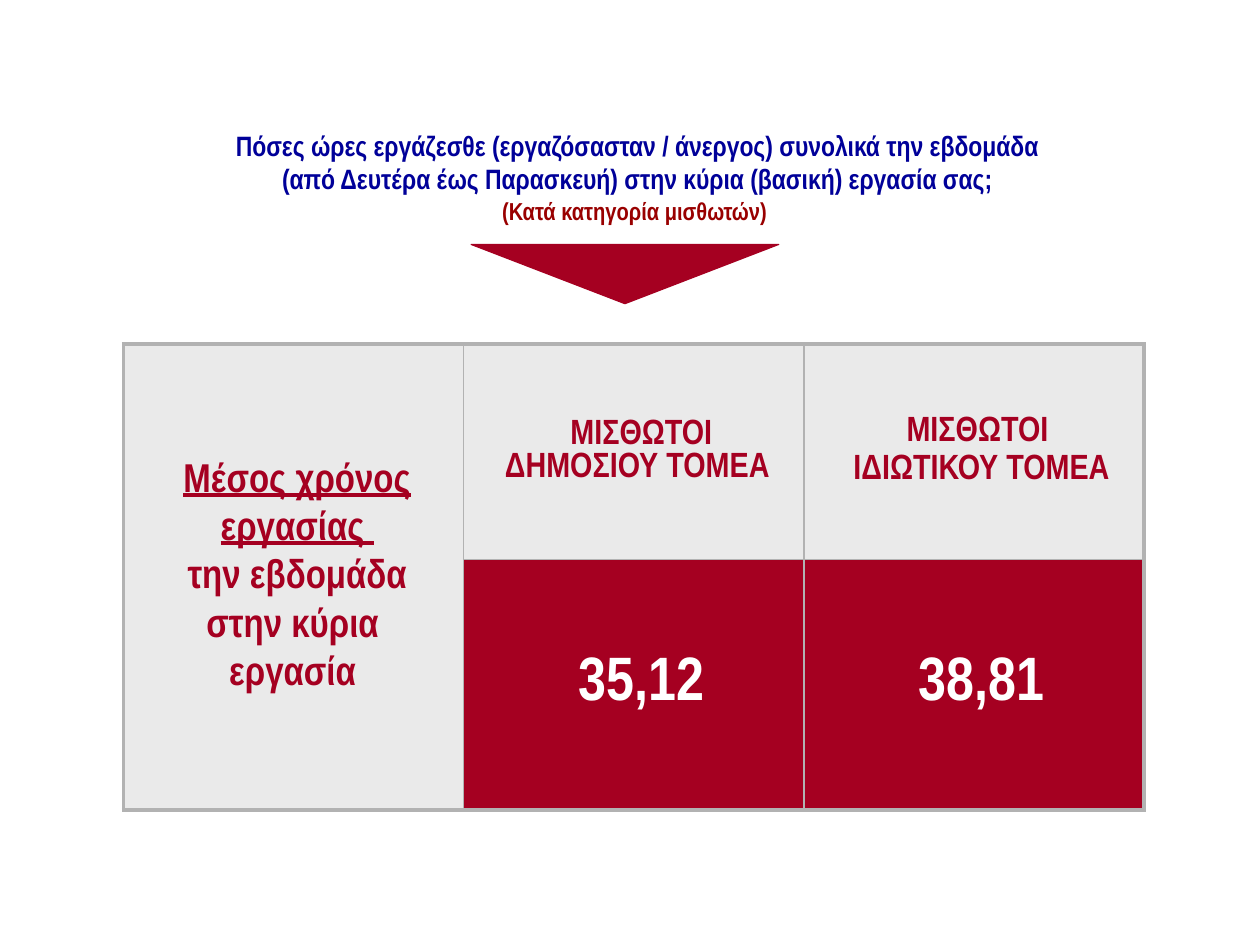
from dataclasses import dataclass

from lxml.etree import SubElement
from pptx import Presentation
from pptx.dml.color import RGBColor
from pptx.enum.shapes import MSO_SHAPE
from pptx.enum.text import MSO_ANCHOR, MSO_AUTO_SIZE, PP_ALIGN
from pptx.oxml import parse_xml
from pptx.oxml.ns import nsdecls, qn
from pptx.util import Inches, Pt

FONT = "Arial Narrow"
COLORS = {
    "question": "000099",
    "note": "990000",
    "crimson": "A50021",
    "panel": "EAEAEA",
    "border": "B2B2B2",
    "white": "FFFFFF",
}
THICK, THIN = 2.25, 1


@dataclass(frozen=True)
class Line:
    text: str
    size: float
    color: str
    underline: bool = False


@dataclass(frozen=True)
class Entry:
    row: int
    column: int
    lines: tuple[Line, ...]
    fill: str


def rgb(name: str) -> RGBColor:
    return RGBColor.from_string(COLORS[name])


def write_lines(frame, lines: tuple[Line, ...]) -> None:
    frame.text = "\n".join(line.text for line in lines)
    for paragraph, line in zip(frame.paragraphs, lines):
        paragraph.alignment = PP_ALIGN.CENTER
        for run in paragraph.runs:
            font = run.font
            font.name, font.size, font.bold = FONT, Pt(line.size), True
            font.underline = line.underline
            font.color.rgb = rgb(line.color)


def add_text(slide, left: float, top: float, width: float, height: float,
             lines: tuple[Line, ...]) -> None:
    frame = slide.shapes.add_textbox(
        Inches(left), Inches(top), Inches(width), Inches(height)).text_frame
    frame.word_wrap = True
    frame.auto_size = MSO_AUTO_SIZE.SHAPE_TO_FIT_TEXT
    write_lines(frame, lines)


def set_borders(cell, widths: dict[str, float]) -> None:
    """Put the borders, keyed L, R, T, B in that order, ahead of the cell's fill."""
    properties = cell._tc.get_or_add_tcPr()
    for index, (side, width) in enumerate(widths.items()):
        border = parse_xml(f'<a:ln{side} {nsdecls("a")} w="{Pt(width)}"/>')
        fill = SubElement(border, qn("a:solidFill"))
        SubElement(fill, qn("a:srgbClr"), val=COLORS["border"])
        properties.insert(index, border)


def fill_entry(table, entry: Entry) -> None:
    cell = table.cell(entry.row, entry.column)
    cell.vertical_anchor = MSO_ANCHOR.MIDDLE
    write_lines(cell.text_frame, entry.lines)
    for paragraph in cell.text_frame.paragraphs:
        paragraph.space_before = Pt(3)
        properties = paragraph._p.get_or_add_pPr()
        properties.set("marL", str(Inches(0.12)))
        properties.set("indent", "0")
    cell.fill.solid()
    cell.fill.fore_color.rgb = rgb(entry.fill)


def add_hours_table(slide, entries: tuple[Entry, ...]) -> None:
    row_heights = (1.71, 1.99)
    column_count, column_width = 3, 2.7
    table = slide.shapes.add_table(
        len(row_heights), column_count, Inches(0.98), Inches(2.73),
        Inches(column_count * column_width), Inches(sum(row_heights))).table
    for column in table.columns:
        column.width = Inches(column_width)
    for row, height in zip(table.rows, row_heights):
        row.height = Inches(height)

    label = table.cell(0, 0)
    label.merge(table.cell(1, 0))
    for row in range(2):
        label_part = table.cell(row, 0)
        label_part.fill.solid()
        label_part.fill.fore_color.rgb = rgb("panel")
        set_borders(label_part, {"L": THICK, "R": THIN, "T": THICK, "B": THICK})

    for entry in entries:
        fill_entry(table, entry)
        set_borders(table.cell(entry.row, entry.column), {
            "L": THIN,
            "R": THICK if entry.column == column_count - 1 else THIN,
            "T": THICK if entry.row == 0 else THIN,
            "B": THICK if entry.row == 1 else THIN,
        })


def add_down_marker(slide) -> None:
    marker = slide.shapes.add_shape(
        MSO_SHAPE.FLOWCHART_MERGE,
        Inches(3.74), Inches(1.94), Inches(2.44), Inches(0.47))
    marker.shadow.inherit = False
    marker.fill.solid()
    marker.fill.fore_color.rgb = rgb("crimson")
    marker.line.color.rgb = rgb("crimson")
    marker.line.width = Pt(0.75)


def heading(text: str) -> Line:
    return Line(text, 20, "crimson")


def hours(text: str) -> Line:
    return Line(text, 35, "white")


QUESTION = (
    Line("Πόσες ώρες εργάζεσθε (εργαζόσασταν / άνεργος) συνολικά την εβδομάδα",
         16, "question"),
    Line("(από Δευτέρα έως Παρασκευή) στην κύρια (βασική) εργασία σας;",
         16, "question"),
    Line("(Κατά κατηγορία μισθωτών) ", 14, "note"),
)
ENTRIES = (
    Entry(0, 1, (heading("ΜΙΣΘΩΤΟΙ ΔΗΜΟΣΙΟΥ ΤΟΜΕΑ "),), "panel"),
    Entry(0, 2, (heading("ΜΙΣΘΩΤΟΙ "), heading("ΙΔΙΩΤΙΚΟΥ ΤΟΜΕΑ")), "panel"),
    Entry(1, 1, (hours("35,12"),), "crimson"),
    Entry(1, 2, (hours("38,81"),), "crimson"),
)
AVERAGE_LABEL = (
    Line("Μέσος χρόνος εργασίας ", 23, "crimson", underline=True),
    Line("την εβδομάδα", 23, "crimson"),
    Line("στην κύρια ", 23, "crimson"),
    Line("εργασία ", 23, "crimson"),
)


def main() -> None:
    presentation = Presentation()
    presentation.slide_width = Inches(10)
    presentation.slide_height = Inches(7.5)
    slide = presentation.slides.add_slide(presentation.slide_layouts[6])
    add_text(slide, 0.16, 0.97, 9.8, 0.89, QUESTION)
    add_down_marker(slide)
    add_hours_table(slide, ENTRIES)
    add_text(slide, 0.98, 3.54, 2.76, 2.04, AVERAGE_LABEL)
    presentation.save("out.pptx")


if __name__ == "__main__":
    main()
